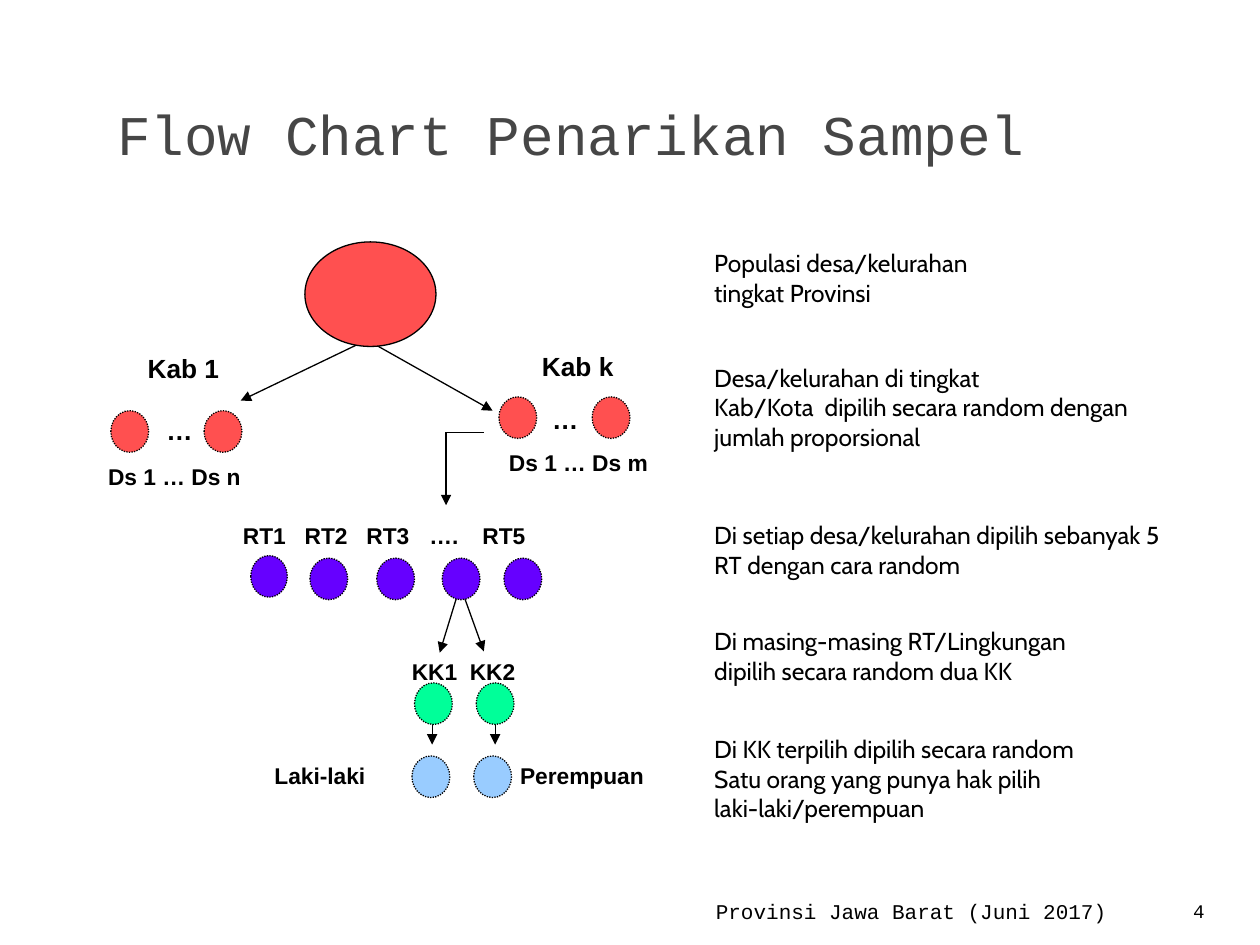
from dataclasses import dataclass

from lxml import etree
from pptx import Presentation
from pptx.dml.color import RGBColor
from pptx.enum import dml, shapes, text
from pptx.oxml import ns
from pptx.util import Emu, Pt

PX = 9144
BLACK = RGBColor(0x00, 0x00, 0x00)
GRAY = RGBColor(0x46, 0x46, 0x46)
RED = RGBColor(0xFF, 0x50, 0x50)
PURPLE = RGBColor(0x66, 0x00, 0xFF)
GREEN = RGBColor(0x00, 0xFF, 0x99)
BLUE = RGBColor(0x99, 0xCC, 0xFF)
LEFT, CENTER, RIGHT = text.PP_ALIGN.LEFT, text.PP_ALIGN.CENTER, text.PP_ALIGN.RIGHT


@dataclass
class Label:
    words: str
    left: int
    top: int
    width: int
    height: int = 32
    size: int = 13
    align: text.PP_ALIGN = LEFT
    tabs: tuple[int, ...] = ()


@dataclass
class Note:
    words: str
    top: int
    width: int
    height: int = 57


@dataclass
class Node:
    left: int
    top: int
    color: RGBColor
    width: int = 30
    height: int = 33
    dotted: bool = True


@dataclass
class Link:
    x1: int
    y1: int
    x2: int
    y2: int
    arrow: bool = True


LABELS = [
    Label("Kab 1", 58, 275, 175, 35, 15, CENTER),
    Label("Kab k", 375, 273, 167, 35, 15, CENTER),
    Label("…", 98, 324, 89, 35, 15, CENTER),
    Label("…", 404, 315, 89, 35, 15, CENTER),
    Label("Ds 1 … Ds n", 76, 362, 146),
    Label("Ds 1 … Ds m", 381, 351, 156, align=CENTER),
    Label("RT1\tRT2\tRT3\t….\tRT5", 183, 409, 308, tabs=(49, 98, 148, 190)),
    Label("KK1\tKK2", 317, 517, 158, tabs=(46,)),
    Label("Laki-laki", 208, 600, 111),
    Label("Perempuan", 403, 600, 147),
]
NOTES = [
    Note("Populasi desa/kelurahan\ntingkat Provinsi", 192, 350),
    Note("Desa/kelurahan di tingkat\n"
         "Kab/Kota  dipilih secara random dengan jumlah proporsional", 283, 395, 80),
    Note("Di setiap desa/kelurahan dipilih sebanyak 5 RT dengan cara random", 408, 395),
    Note("Di masing-masing RT/Lingkungan\ndipilih secara random dua KK", 492, 359),
    Note("Di KK terpilih dipilih secara random\nSatu orang yang punya hak pilih\n"
         "laki-laki/perempuan", 578, 392, 80),
]
NODES = [
    Node(242, 192, RED, 104, 83, dotted=False),
    *(Node(left, 326, RED) for left in (88, 162)),
    *(Node(left, 315, RED) for left in (396, 470)),
    Node(199, 441, PURPLE, 29),
    *(Node(left, 443, PURPLE) for left in (246, 299, 351, 400)),
    *(Node(left, 542, GREEN) for left in (329, 378)),
    *(Node(left, 600, BLUE) for left in (327, 376)),
]
LINKS = [
    Link(295, 268, 191, 318),
    Link(288, 268, 391, 326),
    Link(354, 343, 384, 343, arrow=False),
    Link(354, 343, 354, 401),
    Link(364, 469, 349, 518),
    Link(366, 467, 384, 517),
    Link(343, 550, 343, 591),
    Link(393, 549, 393, 591),
]


def px(*lengths: int) -> list[Emu]:
    return [Emu(length * PX) for length in lengths]


def write(shape, words: str, *, size: int, font: str, color: RGBColor = BLACK,
          bold: bool = False, align: text.PP_ALIGN = LEFT, middle: bool = False,
          grow: bool = True, tabs: tuple[int, ...] = ()) -> None:
    frame = shape.text_frame
    frame.text = words
    frame.word_wrap = True
    frame.auto_size = (text.MSO_AUTO_SIZE.SHAPE_TO_FIT_TEXT if grow
                       else text.MSO_AUTO_SIZE.NONE)
    frame.vertical_anchor = text.MSO_ANCHOR.MIDDLE if middle else text.MSO_ANCHOR.TOP
    for paragraph in frame.paragraphs:
        paragraph.alignment = align
        if tabs:
            properties = paragraph._p.get_or_add_pPr()
            tab_list = etree.SubElement(properties, ns.qn("a:tabLst"))
            for position in tabs:
                etree.SubElement(tab_list, ns.qn("a:tab"), pos=str(position * PX), algn="l")
        for run in paragraph.runs:
            run.font.size = Pt(size)
            run.font.name = font
            run.font.bold = bold
            run.font.color.rgb = color


def add_text(slide, left: int, top: int, width: int, height: int, words: str, **style) -> None:
    write(slide.shapes.add_textbox(*px(left, top, width, height)), words, **style)


def add_node(slide, node: Node) -> None:
    shape = slide.shapes.add_shape(
        shapes.MSO_SHAPE.OVAL, *px(node.left, node.top, node.width, node.height))
    shape.shadow.inherit = False
    shape.fill.solid()
    shape.fill.fore_color.rgb = node.color
    shape.line.color.rgb = BLACK
    shape.line.width = Pt(0.75)
    if node.dotted:
        shape.line.dash_style = dml.MSO_LINE.ROUND_DOT


def add_link(slide, link: Link) -> None:
    connector = slide.shapes.add_connector(
        shapes.MSO_CONNECTOR.STRAIGHT, *px(link.x1, link.y1, link.x2, link.y2))
    connector.line.color.rgb = BLACK
    connector.line.width = Pt(0.75)
    if link.arrow:
        etree.SubElement(connector.line._get_or_add_ln(), ns.qn("a:tailEnd"), type="triangle")
    etree.SubElement(connector._element.spPr, ns.qn("a:effectLst"))


def main() -> None:
    presentation = Presentation()
    presentation.slide_width, presentation.slide_height = px(1000, 750)
    slide = presentation.slides.add_slide(presentation.slide_layouts[5])

    title = slide.shapes.title
    title.left, title.top, title.width, title.height = px(83, 65, 850, 82)
    write(title, "Flow Chart Penarikan Sampel", size=32, font="Courier New",
          color=GRAY, middle=True, grow=False)

    for link in LINKS:
        add_link(slide, link)
    for node in NODES:
        add_node(slide, node)
    for label in LABELS:
        add_text(slide, label.left, label.top, label.width, label.height, label.words,
                 size=label.size, font="Arial", bold=True, align=label.align, tabs=label.tabs)
    for note in NOTES:
        add_text(slide, 557, note.top, note.width, note.height, note.words,
                 size=14, font="Cabin")

    add_text(slide, 496, 697, 392, 52, "Provinsi Jawa Barat (Juni 2017)", size=12,
             font="Courier New", align=RIGHT, middle=True, grow=False)
    add_text(slide, 910, 702, 83, 42, "4", size=11, font="Courier New",
             align=CENTER, middle=True, grow=False)
    presentation.save("out.pptx")


if __name__ == "__main__":
    main()
